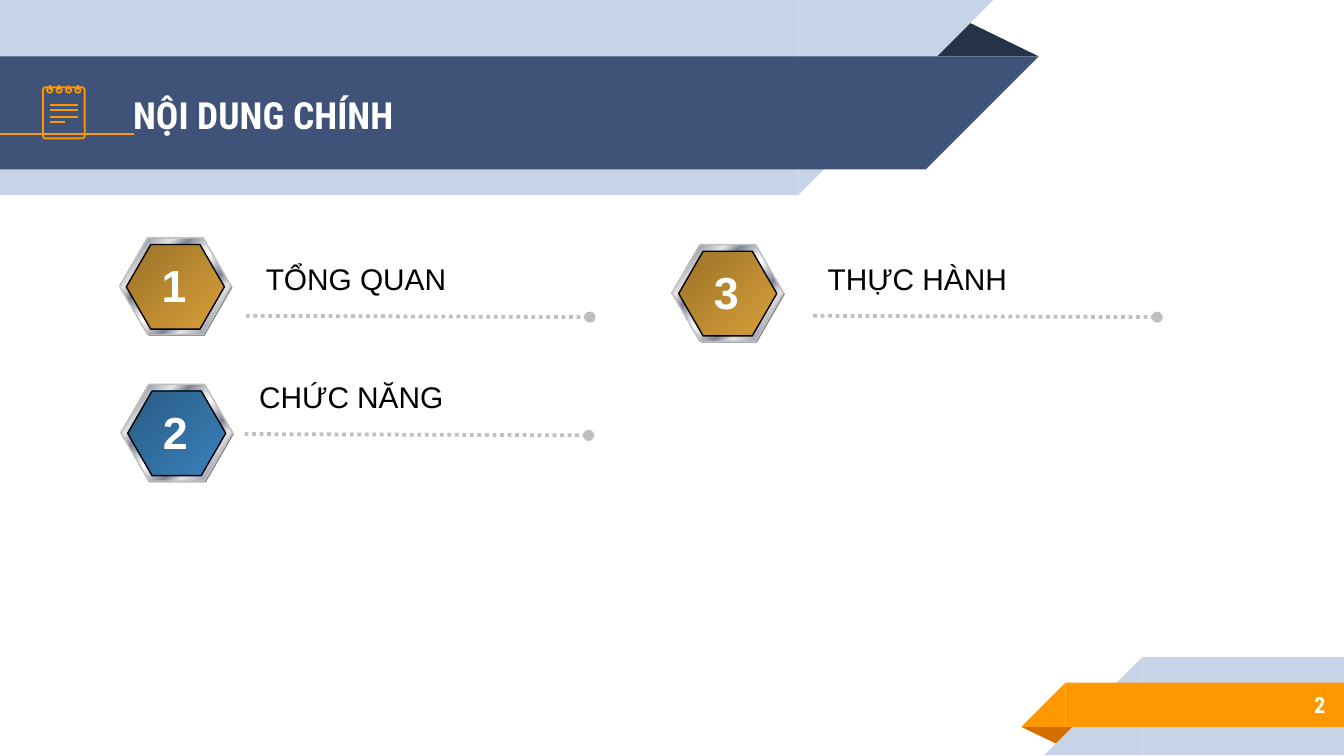
from pptx import Presentation
from pptx.dml.color import RGBColor
from pptx.enum.dml import MSO_LINE
from pptx.enum.shapes import MSO_CONNECTOR, MSO_SHAPE
from pptx.enum.text import MSO_ANCHOR, PP_ALIGN
from pptx.oxml.ns import qn
from pptx.util import Cm, Pt
from lxml.etree import SubElement

# Content
TITLE = "NỘI DUNG CHÍNH"
PAGE = "2"
COLORS = {
    "white": "FFFFFF", "black": "000000", "pale": "C7D3E6", "navy": "3F5378",
    "dark": "263248", "orange": "FF9800", "rust": "D26F00",
    "gray": "808080", "silver": "C0C0C0",
}
GOLD = [(0, "9B7229"), (100, "D89F39")]
BLUE = [(0, "295C85"), (100, "3A81BA")]
METAL = [(0, "E6E6E6"), (8, "7D8496"), (26, "E6E6E6"), (34, "7D8496"),
         (46, "E6E6E6"), (50, "FFFFFF"), (54, "E6E6E6"), (66, "7D8496"),
         (74, "E6E6E6"), (92, "7D8496"), (100, "E6E6E6")]
# number, label, face gradient, badge corner, label corner, line start x (inches)
ITEMS = [
    ("1", "TỔNG QUAN", GOLD, (0.89, 1.77), (1.88, 1.89), 1.83),
    ("2", "CHỨC NĂNG", BLUE, (0.9, 2.86), (1.83, 2.77), 1.82),
    ("3", "THỰC HÀNH", GOLD, (5, 1.82), (6.06, 1.89), 6.05),
]
RECT, CORNER, TRIANGLE = MSO_SHAPE.RECTANGLE, MSO_SHAPE.RIGHT_TRIANGLE, MSO_SHAPE.ISOSCELES_TRIANGLE
# preset, box (inches), colour, flip, rotation
BANNERS = [
    (TRIANGLE, (6.88, 0.14, 0.85, 0.28), "dark", None, 0),
    (RECT, (0, 0, 5.94, 1.45), "pale", "flipH", 180),
    (CORNER, (5.94, 0, 1.45, 1.45), "pale", "flipH", 180),
    (RECT, (0, 0.42, 6.89, 0.84), "navy", "flipH", 180),
    (CORNER, (6.89, 0.42, 0.84, 0.84), "navy", "flipH", 180),
    (TRIANGLE, (7.6, 5.41, 0.43, 0.14), "rust", None, 180),
    (RECT, (8.5, 4.89, 1.5, 0.73), "pale", "flipH", 0),
    (CORNER, (7.77, 4.89, 0.73, 0.73), "pale", "flipH", 0),
    (RECT, (7.93, 5.08, 2.07, 0.33), "orange", "flipH", 0),
    (CORNER, (7.6, 5.08, 0.33, 0.33), "orange", "flipH", 0),
]
BACK_PAGE = [(0.35, 1.05), (0.36, 1.07), (0.37, 1.07), (0.65, 1.07),
             (0.66, 1.06), (0.66, 1.05), (0.66, 0.7), (0.66, 0.69), (0.65, 0.69)]


def lengths(*values):
    """Turn inches into slide lengths."""
    return [Cm(v * 2.54) for v in values]


def rgb(name):
    return RGBColor.from_string(COLORS[name])


def set_gradient(sp, stops):
    sp.fill.background()
    none = sp._element.spPr.find(qn("a:noFill"))
    none.tag = qn("a:gradFill")
    gs_list = SubElement(none, qn("a:gsLst"))
    for pos, color in stops:
        gs = SubElement(gs_list, qn("a:gs"), pos=str(pos * 1000))
        SubElement(gs, qn("a:srgbClr"), val=color)
    SubElement(none, qn("a:lin"), ang="2700000", scaled="0")


def set_look(sp, fill=None, line=None, width=0.75):
    sp.shadow.inherit = False
    if isinstance(fill, list):
        set_gradient(sp, fill)
    elif fill:
        sp.fill.solid()
        sp.fill.fore_color.rgb = rgb(fill)
    else:
        sp.fill.background()
    if line:
        sp.line.color.rgb = rgb(line)
        sp.line.width = Pt(width)
    else:
        sp.line.fill.background()


def add_shape(s, preset, box, adjust=(), **look):
    sp = s.shapes.add_shape(preset, *lengths(*box))
    for i, value in enumerate(adjust):
        sp.adjustments[i] = value
    set_look(sp, **look)
    return sp


def add_line(s, box, color, width):
    line = s.shapes.add_connector(MSO_CONNECTOR.STRAIGHT, *lengths(*box))
    line.line.color.rgb = rgb(color)
    line.line.width = Pt(width)
    SubElement(line._element.spPr, qn("a:effectLst"))
    return line


def write(sp, text, size, font="Arial", color="white", bold=False,
          align=PP_ALIGN.LEFT, anchor=MSO_ANCHOR.TOP, inset=0.05, wrap=True):
    tf = sp.text_frame
    tf.word_wrap = wrap
    tf.vertical_anchor = anchor
    tf.margin_left, tf.margin_right, tf.margin_top, tf.margin_bottom = lengths(0.1, 0.1, inset, inset)
    p = tf.paragraphs[0]
    p.alignment = align
    r = p.add_run()
    r.text = text
    r.font.name, r.font.size, r.font.bold = font, Pt(size), bold
    r.font.color.rgb = rgb(color)


def add_text(s, box, text, size, **fmt):
    write(s.shapes.add_textbox(*lengths(*box)), text, size, **fmt)


def add_notepad(s):
    look = {"line": "orange", "width": 0.96}
    builder = s.shapes.build_freeform(*BACK_PAGE[0], scale=Cm(2.54))
    builder.add_line_segments(BACK_PAGE[1:], close=False)
    set_look(builder.convert_to_shape(), **look)
    add_shape(s, MSO_SHAPE.ROUNDED_RECTANGLE, (0.32, 0.65, 0.31, 0.38), (0.06,), **look)
    for i in range(4):
        x = 0.37 + 0.07 * i
        add_shape(s, MSO_SHAPE.OVAL, (x - 0.02, 0.65, 0.04, 0.04), **look)
        add_line(s, (x, 0.63, x, 0.67), "orange", 0.96)
    for y, end in [(0.78, 0.58), (0.82, 0.58), (0.87, 0.58), (0.91, 0.48)]:
        add_line(s, (end, y, 0.37, y), "orange", 0.96)


def add_item(s, number, label, face, badge, corner, line_x):
    # Hexagonal badge: shadow, metal rim, coloured face
    x, y = badge
    layers = [((x + 0.01, y + 0.01, 0.83, 0.72), "gray", None),
              ((x, y, 0.83, 0.72), METAL, "silver"),
              ((x + 0.05, y + 0.05, 0.73, 0.63), face, "black")]
    for box, fill, line in layers:
        add_shape(s, MSO_SHAPE.HEXAGON, box, (0.289, 1.155), fill=fill, line=line)
    add_text(s, (x + 0.21, y + 0.1, 0.39, 0.5), number, 24, bold=True,
             align=PP_ALIGN.CENTER, wrap=False)
    # Dotted rule and label
    left, top = corner
    rule = add_line(s, (line_x, top + 0.46, line_x + 2.56, top + 0.47), "silver", 2)
    rule.line.dash_style = MSO_LINE.ROUND_DOT
    SubElement(rule.line._get_or_add_ln(), qn("a:tailEnd"), type="oval")
    add_text(s, (left, top, 2.67, 0.37), label, 16, color="black")


def main():
    prs = Presentation()
    prs.slide_width, prs.slide_height = Cm(25.4), Cm(14.29)
    s = prs.slides.add_slide(prs.slide_layouts[5])

    # Folded banners
    for preset, box, color, flip, rotation in BANNERS:
        sp = add_shape(s, preset, box, (0.324,) if preset == TRIANGLE else (), fill=color)
        sp.rotation = rotation
        if flip:
            sp._element.spPr.find(qn("a:xfrm")).set(flip, "1")

    # Title above the banners, and page number
    heading = {"font": "Roboto Condensed", "bold": True,
               "anchor": MSO_ANCHOR.MIDDLE, "inset": 0.1}
    title = s.shapes.title
    title.left, title.top, title.width, title.height = lengths(0.89, 0.43, 5.75, 0.84)
    write(title, TITLE, 20, **heading)
    title._element.getparent().append(title._element)
    add_text(s, (8.33, 5.07, 1.63, 0.35), PAGE, 12, align=PP_ALIGN.RIGHT, **heading)

    add_notepad(s)
    for item in ITEMS:
        add_item(s, *item)
    prs.save("out.pptx")


if __name__ == "__main__":
    main()
